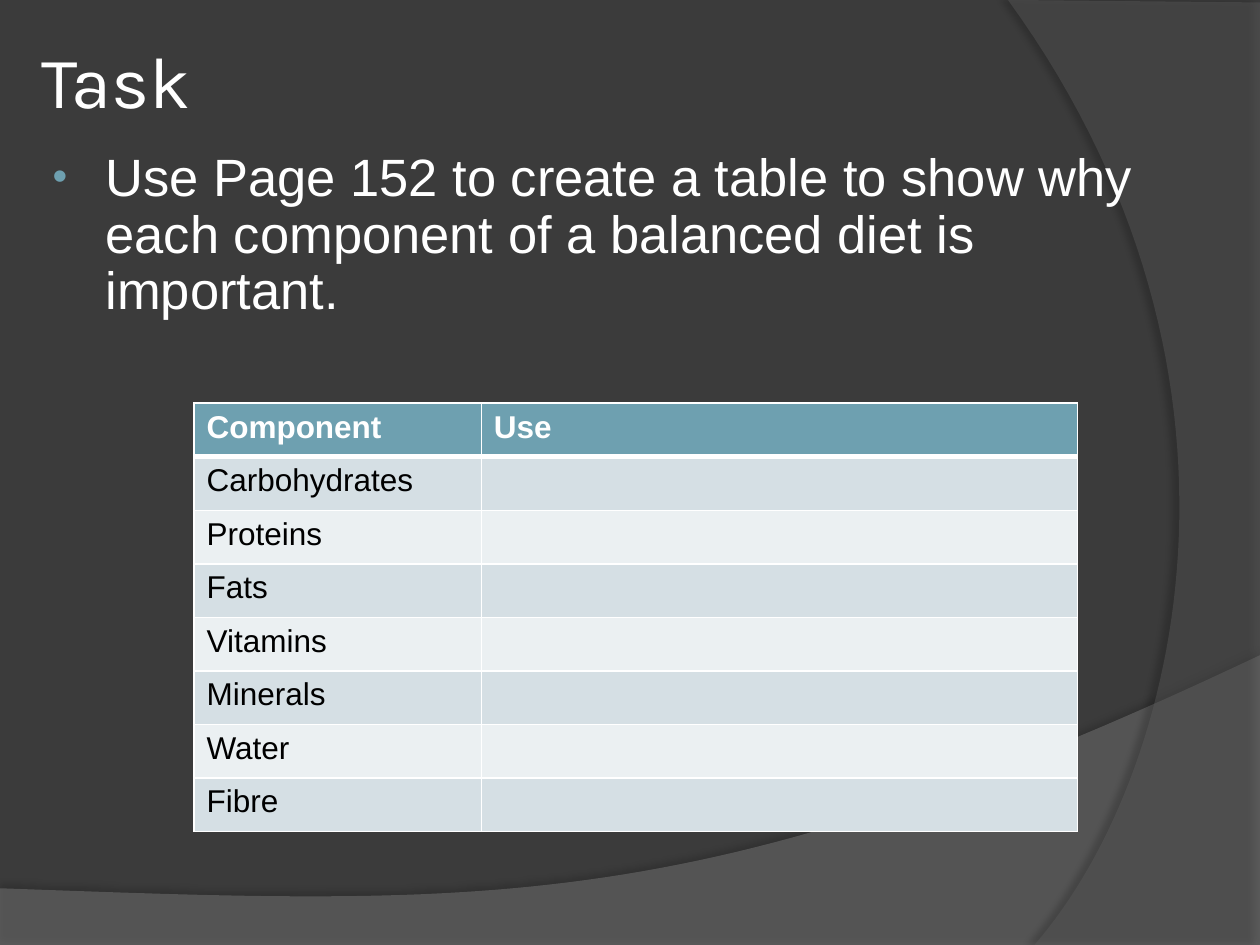
"""Build the balanced diet task slide with its component table."""
from dataclasses import dataclass

from lxml.etree import SubElement
from pptx import Presentation
from pptx.dml.color import RGBColor
from pptx.enum.text import MSO_ANCHOR as Anchor
from pptx.oxml.ns import qn
from pptx.util import Inches, Pt

Point = tuple[float, float]

WHITE = RGBColor(0xFF, 0xFF, 0xFF)
BLACK = RGBColor(0x00, 0x00, 0x00)
BACKGROUND = RGBColor(0x3B, 0x3B, 0x3B)
HILL = RGBColor(0x7F, 0x7F, 0x7F)
ARC = RGBColor(0x5E, 0x5E, 0x5E)
TEAL = RGBColor(0x6E, 0xA0, 0xB0)
BANDS = (RGBColor(0xD5, 0xDF, 0xE4), RGBColor(0xEB, 0xF0, 0xF2))

COMPONENTS = ("Carbohydrates", "Proteins", "Fats", "Vitamins",
              "Minerals", "Water", "Fibre")
ROWS = (("Component", "Use"), *((name, "") for name in COMPONENTS))
COLUMN_WIDTHS = (2.28, 4.73)
ROW_HEIGHT = 0.425


@dataclass(frozen=True)
class Swoosh:
    """A translucent background shape with one curved edge."""
    curve: tuple[Point, Point, Point, Point]
    corners: tuple[Point, ...]
    color: RGBColor
    opacity: int
    shadow_opacity: int
    shadow_distance: float
    shadow_angle: int


SWOOSHES = (
    Swoosh(((10, 5.2), (5.59, 7.29), (3.91, 7.19), (0, 7.05)),
           ((0, 7.51), (10, 7.51)), HILL, 45, 35, 3.5, 270),
    Swoosh(((8.21, 7.5), (9.35, 6.19), (10.18, 3), (8, 0)),
           ((10, 0.02), (10, 7.5)), ARC, 40, 45, 4, 180),
)


def bezier(curve: tuple[Point, ...], steps: int = 60) -> list[Point]:
    """Return evenly stepped points on a cubic curve."""
    points = []
    for i in range(steps + 1):
        t = i / steps
        weights = ((1 - t) ** 3, 3 * t * (1 - t) ** 2, 3 * t * t * (1 - t), t ** 3)
        points.append(tuple(sum(w * p[axis] for w, p in zip(weights, curve))
                            for axis in (0, 1)))
    return points


def set_opacity(color_el, percent: int) -> None:
    """Give a colour element an opacity."""
    SubElement(color_el, qn("a:alpha"), val=str(percent * 1000))


def add_swoosh(slide, swoosh: Swoosh) -> None:
    """Draw a curved background shape and its shadow."""
    points = [(Inches(x), Inches(y))
              for x, y in (*bezier(swoosh.curve), *swoosh.corners)]
    builder = slide.shapes.build_freeform(*points[0])
    builder.add_line_segments(points[1:], close=True)
    sp = builder.convert_to_shape()
    sp.fill.solid()
    sp.fill.fore_color.rgb = swoosh.color
    sp.line.fill.background()
    sp.shadow.inherit = False
    sp_pr = sp._element.spPr
    set_opacity(sp_pr.find(qn("a:solidFill")).find(qn("a:srgbClr")), swoosh.opacity)
    shadow = SubElement(sp_pr.find(qn("a:effectLst")), qn("a:outerShdw"),
                        blurRad=str(Pt(4)), dist=str(Pt(swoosh.shadow_distance)),
                        dir=str(swoosh.shadow_angle * 60000), rotWithShape="0")
    set_opacity(SubElement(shadow, qn("a:srgbClr"), val=str(BLACK)),
                swoosh.shadow_opacity)


def add_run(p, text: str, size: float, font: str = "Arial",
            color: RGBColor = WHITE, bold: bool = False) -> None:
    """Append a formatted run to a paragraph."""
    r = p.add_run()
    r.text = text
    r.font.size = Pt(size)
    r.font.name = font
    r.font.color.rgb = color
    r.font.bold = bold


def add_text_frame(slide, top: float, height: float):
    """Add a wrapped text box in the main column."""
    tf = slide.shapes.add_textbox(Inches(0.28), Inches(top),
                                  Inches(9.45), Inches(height)).text_frame
    tf.word_wrap = True
    return tf


def add_bullet(p) -> None:
    """Give a paragraph a hanging teal bullet."""
    p_pr = p._p.get_or_add_pPr()
    p_pr.set("marL", str(Inches(0.46)))
    p_pr.set("indent", str(Inches(-0.42)))
    SubElement(SubElement(p_pr, qn("a:buClr")), qn("a:srgbClr"), val=str(TEAL))
    SubElement(p_pr, qn("a:buSzPct"), val="80000")
    SubElement(p_pr, qn("a:buFont"), typeface="Arial")
    SubElement(p_pr, qn("a:buChar"), char="•")


def set_borders(cell, top: float, bottom: float) -> None:
    """Outline a cell in white with the given top and bottom weights."""
    tc_pr = cell._tc.get_or_add_tcPr()
    for side, width in (("L", 1), ("R", 1), ("T", top), ("B", bottom)):
        ln = SubElement(tc_pr, qn(f"a:ln{side}"), w=str(Pt(width)))
        SubElement(SubElement(ln, qn("a:solidFill")), qn("a:srgbClr"), val=str(WHITE))


def add_component_table(slide) -> None:
    """Add the table of diet components."""
    table = slide.shapes.add_table(
        len(ROWS), len(COLUMN_WIDTHS), Inches(1.54), Inches(3.2),
        Inches(sum(COLUMN_WIDTHS)), Inches(ROW_HEIGHT * len(ROWS))).table
    for column, width in zip(table.columns, COLUMN_WIDTHS):
        column.width = Inches(width)
    for i, texts in enumerate(ROWS):
        table.rows[i].height = Inches(ROW_HEIGHT)
        header = i == 0
        for j, text in enumerate(texts):
            cell = table.cell(i, j)
            set_borders(cell, 3 if i == 1 else 1, 3 if header else 1)
            cell.fill.solid()
            cell.fill.fore_color.rgb = TEAL if header else BANDS[(i - 1) % 2]
            if text:
                add_run(cell.text_frame.paragraphs[0], text, 18,
                        color=WHITE if header else BLACK, bold=header)


def main() -> None:
    """Build and save the slide."""
    prs = Presentation()
    prs.slide_width, prs.slide_height = Inches(10), Inches(7.5)
    s = prs.slides.add_slide(prs.slide_layouts[6])
    s.background.fill.solid()
    s.background.fill.fore_color.rgb = BACKGROUND
    for swoosh in SWOOSHES:
        add_swoosh(s, swoosh)

    tf = add_text_frame(s, 0.21, 0.85)
    tf.vertical_anchor = Anchor.MIDDLE
    tf.margin_left = tf.margin_right = Inches(0.05)
    add_run(tf.paragraphs[0], "Task", 41.4, "Karla")

    p = add_text_frame(s, 1.15, 6.14).paragraphs[0]
    p.line_spacing = 0.9
    p.space_before = Pt(6)
    add_bullet(p)
    add_run(p, "Use Page 152 to create a table to show why each component "
               "of a balanced diet is important.", 30)

    add_component_table(s)
    prs.save("out.pptx")


if __name__ == "__main__":
    main()
